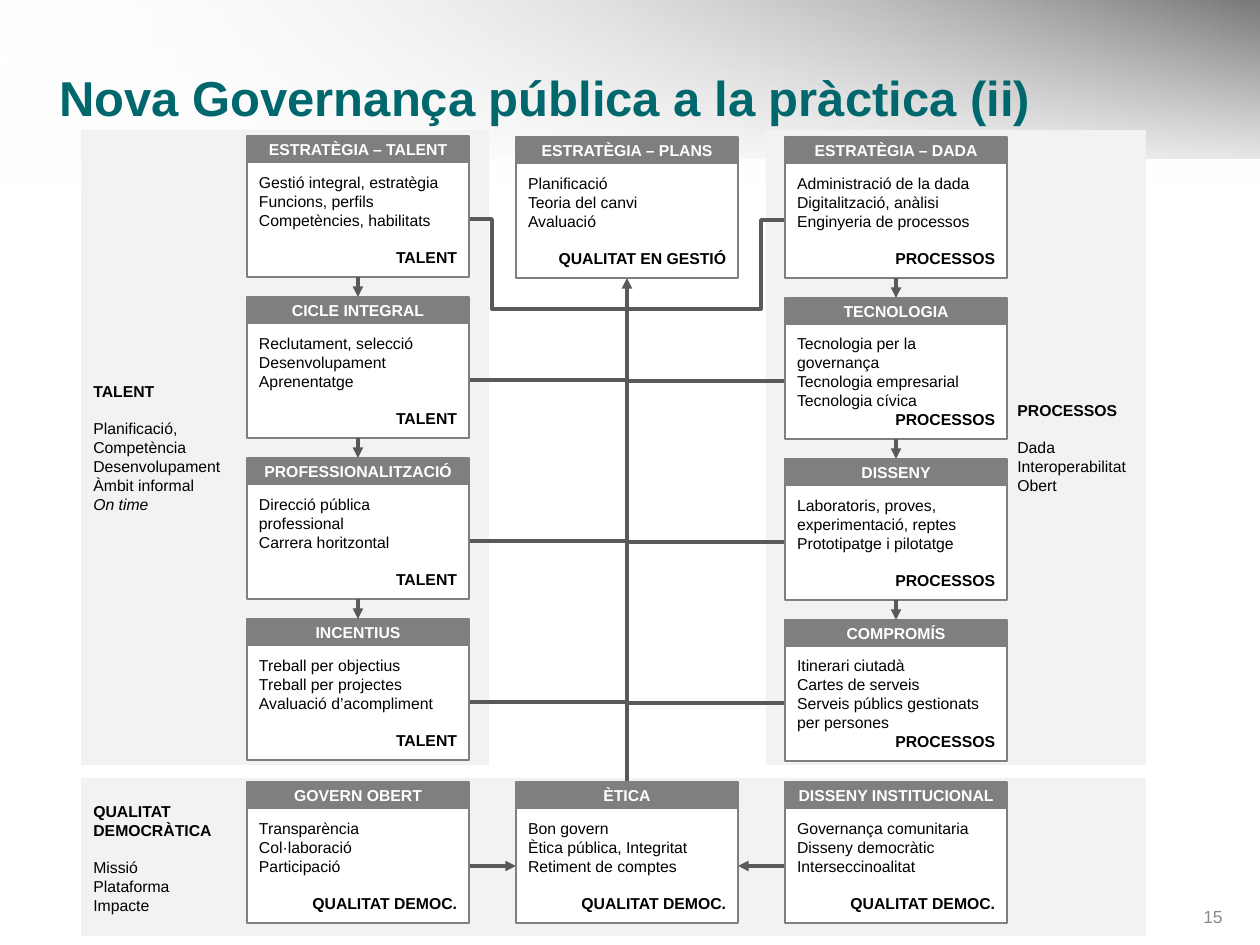
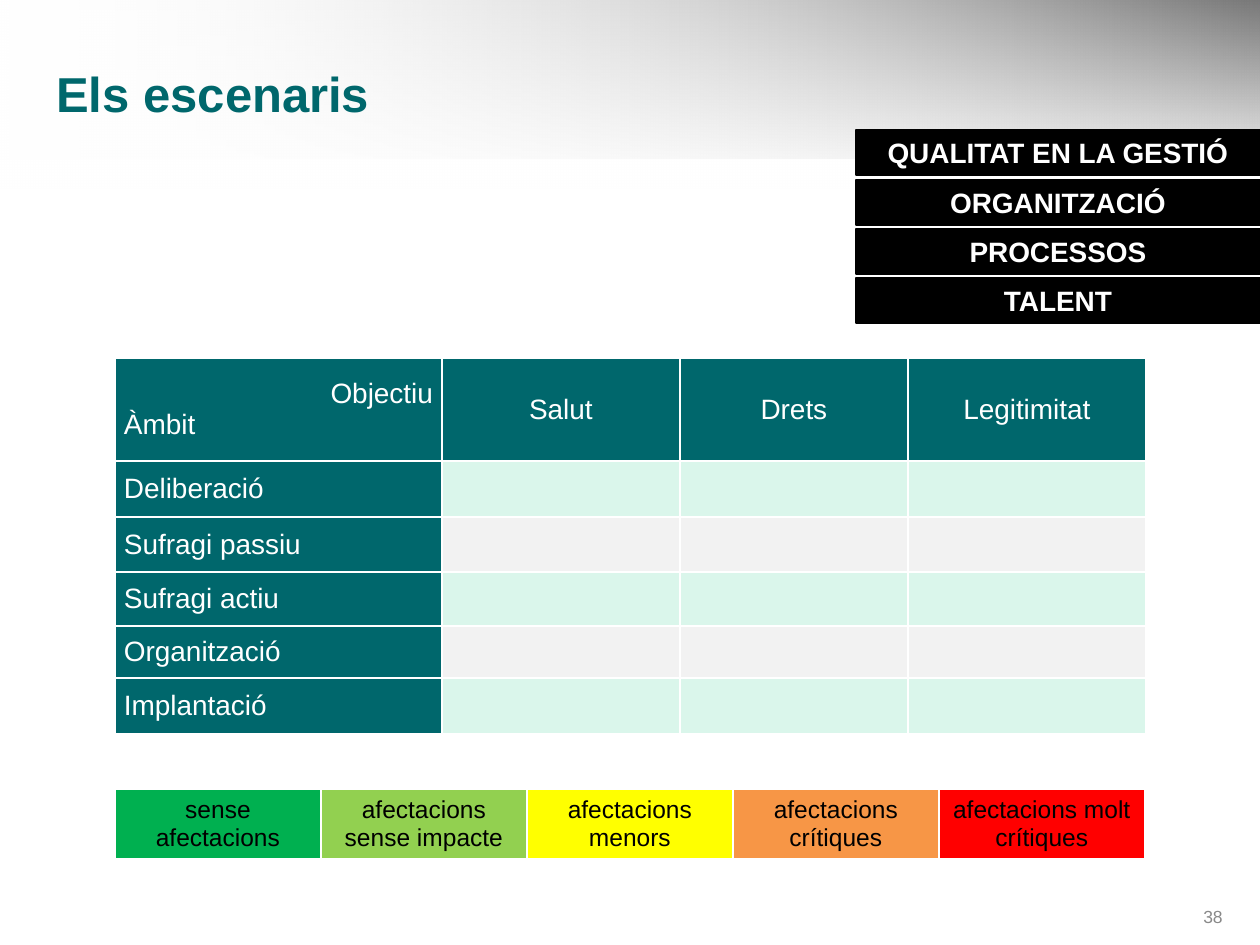
from itertools import product
from pptx import Presentation
from pptx.dml.color import RGBColor
from pptx.enum.shapes import MSO_CONNECTOR as Link, MSO_SHAPE as Form
from pptx.enum.text import MSO_ANCHOR as Anchor, PP_ALIGN as Align
from pptx.oxml import parse_xml
from pptx.oxml.ns import nsdecls, qn
from pptx.util import Pt

UNIT = 914400 / 126
FONT = "Arial"
TEAL = RGBColor(0x00, 0x67, 0x6C)
MINT = RGBColor(0xDA, 0xF6, 0xEB)
PALE = RGBColor(0xF2, 0xF2, 0xF2)
GRAY = RGBColor(0x7F, 0x7F, 0x7F)
DARK = RGBColor(0x59, 0x59, 0x59)
DIM = RGBColor(0x89, 0x89, 0x89)
WHITE = RGBColor(0xFF, 0xFF, 0xFF)
BLACK = RGBColor(0x00, 0x00, 0x00)
GREEN = RGBColor(0x00, 0xB0, 0x50)
LIME = RGBColor(0x92, 0xD0, 0x50)
YELLOW = RGBColor(0xFF, 0xFF, 0x00)
ORANGE = RGBColor(0xF7, 0x96, 0x46)
RED = RGBColor(0xFF, 0x00, 0x00)

WIDE, HIGH = 1260, 945
CARD_W, HEAD_H, BODY_H = 222, 26, 115
CARD_H = HEAD_H + BODY_H
COLS = [247 + 269 * i for i in range(3)]
STEP = 161
TOPS = [136, 137, 137]
BASE = 782
TRUNK = 627

TALENT = [
    ("ESTRATÈGIA – TALENT", ["Gestió integral, estratègia", "Funcions, perfils",
                             "Competències, habilitats"], True),
    ("CICLE INTEGRAL", ["Reclutament, selecció", "Desenvolupament", "Aprenentatge"], True),
    ("PROFESSIONALITZACIÓ", ["Direcció pública professional", "Carrera horitzontal"], True),
    ("INCENTIUS", ["Treball per objectius", "Treball per projectes",
                   "Avaluació d’acompliment"], True),
]
PLANS = [("ESTRATÈGIA – PLANS", ["Planificació", "Teoria del canvi", "Avaluació"], True)]
DATA = [
    ("ESTRATÈGIA – DADA", ["Administració de la dada", "Digitalització, anàlisi",
                           "Enginyeria de processos"], True),
    ("TECNOLOGIA", ["Tecnologia per la governança", "Tecnologia empresarial",
                    "Tecnologia cívica"], False),
    ("DISSENY", ["Laboratoris, proves, experimentació, reptes",
                 "Prototipatge i pilotatge"], True),
    ("COMPROMÍS", ["Itinerari ciutadà", "Cartes de serveis",
                   "Serveis públics gestionats per persones"], False),
]
STACKS = [(TALENT, "TALENT"), (PLANS, "QUALITAT EN GESTIÓ"), (DATA, "PROCESSOS")]
ETHICS = [
    ("GOVERN OBERT", ["Transparència", "Col·laboració", "Participació"], True),
    ("ÈTICA", ["Bon govern", "Ètica pública, Integritat", "Retiment de comptes"], True),
    ("DISSENY INSTITUCIONAL", ["Governança comunitaria", "Disseny democràtic",
                               "Interseccinoalitat"], True),
]
GOALS = ["Salut", "Drets", "Legitimitat"]
FIELDS = ["Deliberació", "Sufragi passiu", "Sufragi actiu", "Organització", "Implantació"]
LEVELS = [("sense afectacions", GREEN), ("afectacions sense impacte", LIME),
          ("afectacions menors", YELLOW), ("afectacions crítiques", ORANGE),
          ("afectacions molt crítiques", RED)]
LABELS = ["QUALITAT EN LA GESTIÓ", "ORGANITZACIÓ", "PROCESSOS", "TALENT"]

BOLD = {"bold": True}
GAP = {"space_before": Pt(10.5)}


def px(*vals):
    return [round(v * UNIT) for v in vals]


def apply(item, fmt):
    for key, val in fmt.items():
        setattr(item, key, val)


class Deck:
    def __init__(self):
        self.prs = Presentation()
        self.prs.slide_width, self.prs.slide_height = px(WIDE, HIGH)

    def page(self, title, num, x, y):
        self.slide = self.prs.slides.add_slide(self.prs.slide_layouts[6])
        self.fade(159, 0, ("FFFFFF", 0), ("000000", 100))
        self.fade(189, 90, ("FFFFFF", 47), ("FFFFFF", 100))
        self.label(x, y, 1159, 79, [(title, BOLD, {})], TEAL, 28)
        self.label(1155, 900, 80, 36, [(num, {}, {"alignment": Align.RIGHT})],
                   DIM, 10, Anchor.TOP)

    def fade(self, h, angle, *stops):
        shape = self.rect(0, 0, WIDE, h, WHITE)
        marks = "".join(
            f'<a:gs pos="{i * 100000}"><a:srgbClr val="{tone}">'
            f'<a:alpha val="{alpha * 1000}"/></a:srgbClr></a:gs>'
            for i, (tone, alpha) in enumerate(stops))
        grad = parse_xml(f'<a:gradFill {nsdecls("a")} rotWithShape="1"><a:gsLst>{marks}</a:gsLst>'
                         f'<a:lin ang="{angle * 60000}" scaled="0"/></a:gradFill>')
        props = shape._element.spPr
        props.replace(props.find(qn("a:solidFill")), grad)

    def text(self, frame, rows, tone, size):
        for i, (words, face, form) in enumerate(rows):
            para = frame.paragraphs[0] if i == 0 else frame.add_paragraph()
            apply(para, form)
            run = para.add_run()
            run.text = words
            apply(run.font, {"name": FONT, "size": Pt(size), **face})
            run.font.color.rgb = tone

    def label(self, x, y, w, h, rows, tone=BLACK, size=9, anchor=Anchor.MIDDLE):
        frame = self.slide.shapes.add_textbox(*px(x, y, w, h)).text_frame
        apply(frame, {"word_wrap": True, "vertical_anchor": anchor})
        self.text(frame, rows, tone, size)

    def rect(self, x, y, w, h, fill, line=None, rows=(), tone=BLACK, size=9, inset=12):
        shape = self.slide.shapes.add_shape(Form.RECTANGLE, *px(x, y, w, h))
        shape.shadow.inherit = False
        shape.fill.solid()
        shape.fill.fore_color.rgb = fill
        if line is None:
            shape.line.fill.background()
        else:
            shape.line.color.rgb = line
            shape.line.width = Pt(0)
        side = px(inset)[0]
        apply(shape.text_frame, {"word_wrap": True, "vertical_anchor": Anchor.MIDDLE,
                                 "margin_left": side, "margin_right": side})
        self.text(shape.text_frame, rows, tone, size)
        return shape

    def card(self, x, y, head, lines, space, foot):
        rows = [(line, {}, {"alignment": Align.LEFT}) for line in lines]
        gap = GAP if space else {}
        rows.append((foot, BOLD, {"alignment": Align.RIGHT, **gap}))
        self.rect(x, y + HEAD_H, CARD_W, BODY_H, WHITE, GRAY, rows)
        self.rect(x, y, CARD_W, HEAD_H, GRAY, GRAY,
                  [(head, BOLD, {"alignment": Align.CENTER})], WHITE, inset=10)

    def link(self, x1, y1, x2, y2, arrow=True, bend=None):
        kind = Link.STRAIGHT if bend is None else Link.ELBOW
        line = self.slide.shapes.add_connector(kind, *px(x1, y1, x2, y2))
        line.line.color.rgb = DARK
        line.line.width = Pt(0)
        props = line._element.spPr
        if bend is not None:
            ratio = round(100000 * (bend - x1) / (x2 - x1))
            guide = parse_xml(f'<a:avLst {nsdecls("a")}>'
                              f'<a:gd name="adj1" fmla="val {ratio}"/></a:avLst>')
            geom = props.find(qn("a:prstGeom"))
            for old in list(geom):
                geom.remove(old)
            geom.append(guide)
        if arrow:
            props.find(qn("a:ln")).append(
                parse_xml(f'<a:tailEnd {nsdecls("a")} type="triangle"/>'))
        props.append(parse_xml(f'<a:effectLst {nsdecls("a")}/>'))

    def grid(self, x, y, cols, rows):
        shape = self.slide.shapes.add_table(
            len(rows), len(cols), *px(x, y, sum(cols), sum(rows)))
        table = shape.table
        apply(table, {"first_row": False, "horz_banding": False})
        for col, w in zip(table.columns, px(*cols)):
            col.width = w
        for row, h in zip(table.rows, px(*rows)):
            row.height = h
        return table

    def cell(self, cell, fill, rows=(), tone=WHITE, size=16):
        side = px(9)[0]
        apply(cell, {"margin_left": side, "margin_right": side, "margin_top": 0,
                     "margin_bottom": 0, "vertical_anchor": Anchor.MIDDLE})
        cell.fill.solid()
        cell.fill.fore_color.rgb = fill
        props = cell._tc.get_or_add_tcPr()
        for i, edge in enumerate("LRTB"):
            props.insert(i, parse_xml(
                f'<a:ln{edge} {nsdecls("a")} w="12700"><a:solidFill>'
                f'<a:srgbClr val="{WHITE}"/></a:solidFill></a:ln{edge}>'))
        self.text(cell.text_frame, rows, tone, size)


def draw_map(deck):
    deck.page("Nova Governança pública a la pràctica (ii)", "15", 47, 57)
    for x, y, w, h in [(766, 130, 380, 635), (81, 130, 408, 635), (81, 778, 1065, 158)]:
        deck.rect(x, y, w, h, PALE)
    plain = [(t, {}, {}) for t in ("Plataforma", "Impacte")]
    deck.label(81, 782, 189, 152, [("QUALITAT", BOLD, {}), ("DEMOCRÀTICA", BOLD, {}),
                                   ("Missió", {}, GAP), *plain])
    plain = [(t, {}, {}) for t in ("Competència", "Desenvolupament", "Àmbit informal")]
    deck.label(81, 367, 166, 161, [("TALENT", BOLD, {}), ("Planificació,", {}, GAP), *plain,
                                   ("On time", {"italic": True}, {})])
    plain = [(t, {}, {}) for t in ("Interoperabilitat", "Obert")]
    deck.label(1005, 399, 141, 97, [("PROCESSOS", BOLD, {}), ("Dada", {}, GAP), *plain])

    left, right = COLS[0] + CARD_W, COLS[2]
    for (edge, top, bend), i in product([(left, TOPS[0], 492), (right, TOPS[2], 761)], range(4)):
        y = top + 83 + STEP * i
        if i == 0:
            deck.link(edge, y, TRUNK, 309, False, bend)
        else:
            deck.link(edge, y, TRUNK, y, False)
    deck.link(TRUNK, BASE, TRUNK, TOPS[1] + CARD_H)
    deck.link(left, BASE + 84, COLS[1], BASE + 84)
    deck.link(right, BASE + 84, COLS[1] + CARD_W, BASE + 84)

    for x, top, (cards, foot) in zip(COLS, TOPS, STACKS):
        for i, card in enumerate(cards):
            y = top + STEP * i
            deck.card(x, y, *card, foot)
            if i:
                mid = x + CARD_W // 2
                deck.link(mid, y - STEP + CARD_H, mid, y)
    for x, card in zip(COLS, ETHICS):
        deck.card(x, BASE, *card, "QUALITAT DEMOC.")


def draw_cases(deck):
    deck.page("Els escenaris", "38", 44, 53)
    table = deck.grid(115, 358, [327, 238, 228, 238], [103, 56, 55, 54, 52, 56])
    mid = {"alignment": Align.CENTER}
    deck.cell(table.cell(0, 0), TEAL, [("Objectiu", {}, {"alignment": Align.RIGHT}),
                                       ("Àmbit", {}, {})])
    for c, goal in enumerate(GOALS, 1):
        deck.cell(table.cell(0, c), TEAL, [(goal, {}, mid)])
    for r, field in enumerate(FIELDS, 1):
        deck.cell(table.cell(r, 0), TEAL, [(field, {}, {})])
        for c in range(1, 4):
            deck.cell(table.cell(r, c), MINT if r % 2 else PALE)
    scale = deck.grid(115, 789, [206] * 5, [70])
    for c, (level, fill) in enumerate(LEVELS):
        deck.cell(scale.cell(0, c), fill, [(level, {}, mid)], BLACK, 14)
    for i, name in enumerate(LABELS):
        deck.rect(856, 130 + round(49.5 * i), 404, 45, BLACK, BLACK,
                  [(name, BOLD, mid)], WHITE, 16)


def main():
    deck = Deck()
    draw_map(deck)
    draw_cases(deck)
    deck.prs.save("out.pptx")


if __name__ == "__main__":
    main()
